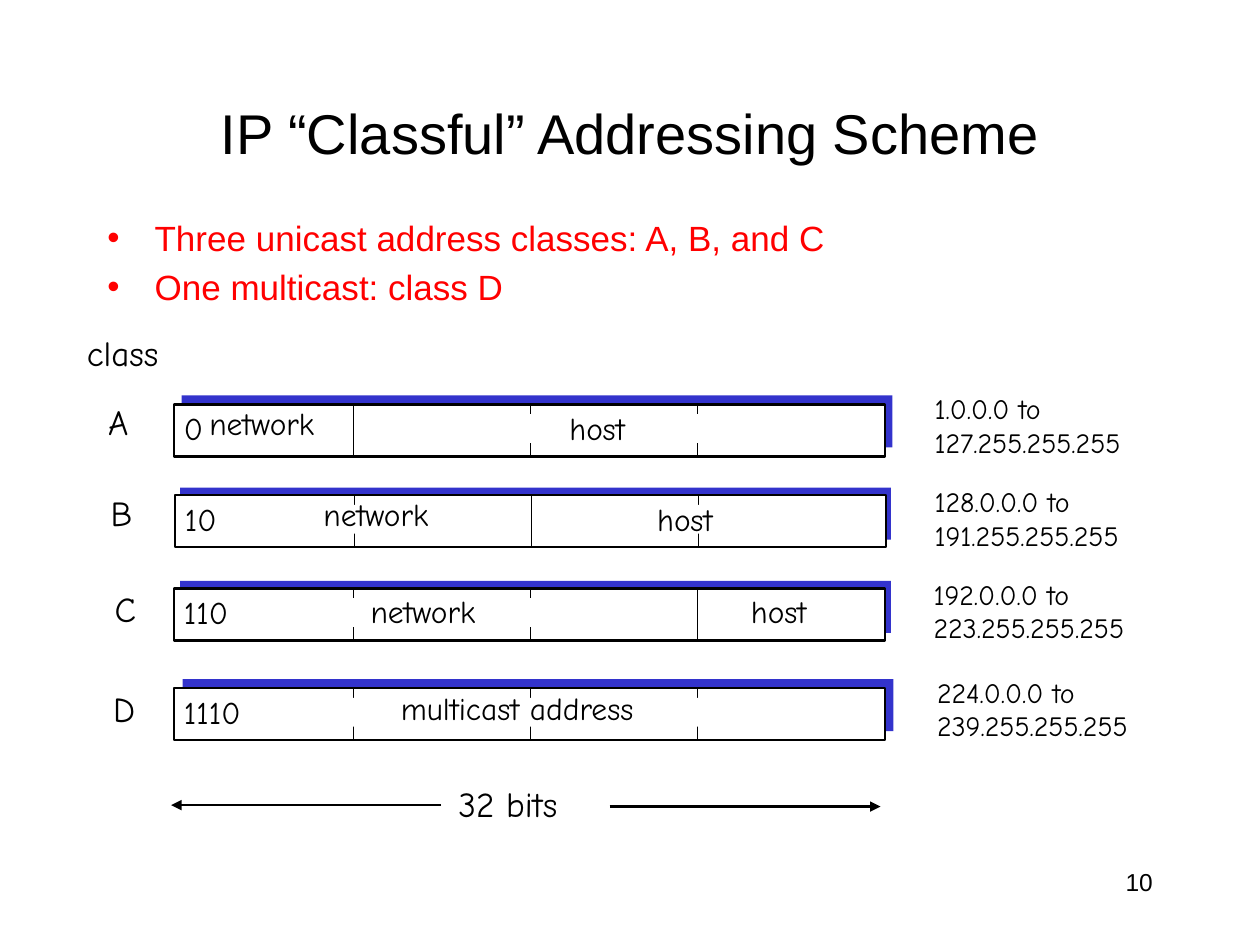
from dataclasses import dataclass

import pptx
import pptx.dml.color
import pptx.enum.shapes
import pptx.enum.text
import pptx.oxml
import pptx.oxml.ns
import pptx.util
from pptx.util import Cm


def rgb(value):
    return pptx.dml.color.RGBColor.from_string(value)


@dataclass(frozen=True)
class Theme:
    ink = rgb("000000")
    paper = rgb("FFFFFF")
    accent = rgb("FF0000")
    backing = rgb("3333CC")
    heading_font = "Arial"
    drawing_font = "Comic Neue"
    title_size = 32
    large_size = 20
    field_size = 18
    range_size = 16
    number_size = 14


THEME = Theme()
BAR_WIDTH, BAR_HEIGHT = 14.33, 1.05
OCTET_EDGES = (3.61, 7.19, 10.55)


@dataclass(frozen=True)
class AddressClass:
    """One row; backing and field positions are offsets from the bar's corner."""
    name: str
    name_at: tuple
    bar_at: tuple
    backing_offset: tuple
    prefix: str
    fields: tuple
    solid_edge: int | None
    range_at: tuple
    first: str
    last: str


CLASSES = (
    AddressClass("A", (1.93, 7.95), (3.51, 8.15), (0.15, -0.18), "0",
                 (("network", 0.46, -0.13, 2.92), ("host", 7.72, -0.03, 1.83)),
                 0, (18.59, 7.77), "1.0.0.0", "127.255.255.255"),
    AddressClass("B", (1.98, 9.78), (3.53, 9.98), (0.1, -0.15), "10",
                 (("network", 2.74, -0.13, 2.92), ("host", 9.47, -0.03, 1.83)),
                 1, (18.59, 9.65), "128.0.0.0", "191.255.255.255"),
    AddressClass("C", (2.06, 11.71), (3.51, 11.86), (0.12, -0.15), "110",
                 (("network", 3.71, -0.05, 2.92), ("host", 11.38, -0.05, 1.83)),
                 2, (18.57, 11.51), "192.0.0.0", "223.255.255.255"),
    AddressClass("D", (2.03, 13.74), (3.51, 13.87), (0.17, -0.18), "1110",
                 (("multicast address", 4.32, -0.1, 5.79),),
                 None, (18.64, 13.49), "224.0.0.0", "239.255.255.255"),
)


def write_lines(frame, lines, size, font, color=THEME.ink, align=None):
    for index, line in enumerate(lines):
        para = frame.paragraphs[0] if index == 0 else frame.add_paragraph()
        if align is not None:
            para.alignment = align
        span = para.add_run()
        span.text = line
        span.font.size = pptx.util.Pt(size)
        span.font.name = font
        span.font.color.rgb = color


def fill_placeholder(holder, bounds, lines, size, color, align=None):
    holder.left, holder.top, holder.width, holder.height = map(Cm, bounds)
    holder.text_frame.auto_size = pptx.enum.text.MSO_AUTO_SIZE.NONE
    write_lines(holder.text_frame, lines, size, THEME.heading_font, color, align)


def add_label(page, left, top, width, height, lines, size):
    """Add unwrapped text in the drawing font."""
    box = page.shapes.add_textbox(Cm(left), Cm(top), Cm(width), Cm(height))
    box.text_frame.word_wrap = False
    box.text_frame.auto_size = pptx.enum.text.MSO_AUTO_SIZE.SHAPE_TO_FIT_TEXT
    write_lines(box.text_frame, lines, size, THEME.drawing_font)


def add_rectangle(page, left, top, width, height, color, outlined=False):
    box = page.shapes.add_shape(pptx.enum.shapes.MSO_SHAPE.RECTANGLE,
                                Cm(left), Cm(top), Cm(width), Cm(height))
    box.shadow.inherit = False
    box.fill.solid()
    box.fill.fore_color.rgb = color
    if outlined:
        box.line.color.rgb = THEME.ink
        box.line.width = pptx.util.Pt(1.5)
    else:
        box.line.fill.background()


def add_line(page, start, end, weight, arrow=False):
    line = page.shapes.add_connector(pptx.enum.shapes.MSO_CONNECTOR.STRAIGHT,
                                     *map(Cm, start + end))
    line.line.color.rgb = THEME.ink
    line.line.width = pptx.util.Pt(weight)
    if arrow:
        tail = pptx.oxml.parse_xml(
            f'<a:tailEnd {pptx.oxml.ns.nsdecls("a")} type="triangle"/>')
        line.line._get_or_add_ln().append(tail)
    effects = pptx.oxml.parse_xml(f'<a:effectLst {pptx.oxml.ns.nsdecls("a")}/>')
    line._element.spPr.append(effects)


def add_octet_edge(page, x, top, solid):
    """Draw a full divider, or only ticks at the top and bottom of the bar."""
    add_line(page, (x, top), (x, top + BAR_HEIGHT), 0.75)
    if not solid:
        add_rectangle(page, x - 0.15, top + 0.2, 0.3, 0.58, THEME.paper)


def add_address_class(page, row):
    left, top = row.bar_at
    shift_x, shift_y = row.backing_offset
    add_rectangle(page, left + shift_x, top + shift_y,
                  BAR_WIDTH, BAR_HEIGHT, THEME.backing)
    add_rectangle(page, left, top, BAR_WIDTH, BAR_HEIGHT, THEME.paper, True)
    for index, edge in enumerate(OCTET_EDGES):
        add_octet_edge(page, left + edge, top, index == row.solid_edge)
    prefix_width = 0.6 + 0.29 * len(row.prefix)
    fields = ((row.prefix, -0.05, -0.03, prefix_width),) + row.fields
    for text, x, y, width in fields:
        add_label(page, left + x, top + y, width, 1.02, [text], THEME.field_size)
    add_label(page, *row.name_at, 1, 1.1, [row.name], THEME.large_size)
    add_label(page, *row.range_at, 4.98, 1.62,
              [f"{row.first} to", row.last], THEME.range_size)


def add_page_number(page, text):
    box = page.shapes.add_textbox(Cm(18.21), Cm(17.35), Cm(5.28), Cm(1.27))
    box.text_frame.word_wrap = True
    write_lines(box.text_frame, [text], THEME.number_size, THEME.heading_font,
                align=pptx.enum.text.PP_ALIGN.RIGHT)


def main():
    deck = pptx.Presentation()
    deck.slide_width, deck.slide_height = Cm(25.4), Cm(19.05)
    page = deck.slides.add_slide(deck.slide_layouts[1])
    fill_placeholder(page.shapes.title, (1.91, 1.07, 21.59, 3.18),
                     ["IP “Classful” Addressing Scheme"], THEME.title_size,
                     THEME.ink, pptx.enum.text.PP_ALIGN.CENTER)
    fill_placeholder(page.placeholders[1], (1.91, 4.24, 20.75, 2.34),
                     ["Three unicast address classes: A, B, and C",
                      "One multicast: class D"], THEME.large_size, THEME.accent)
    add_label(page, 1.5, 6.55, 2.11, 1.09, ["class"], THEME.large_size)
    for row in CLASSES:
        add_address_class(page, row)
    add_label(page, 8.99, 15.65, 2.87, 1.09, ["32 bits"], THEME.large_size)
    add_line(page, (8.89, 16.23), (3.45, 16.23), 1.5, arrow=True)
    add_line(page, (12.29, 16.26), (17.75, 16.26), 1.5, arrow=True)
    add_page_number(page, "10")
    deck.save("out.pptx")


if __name__ == "__main__":
    main()
